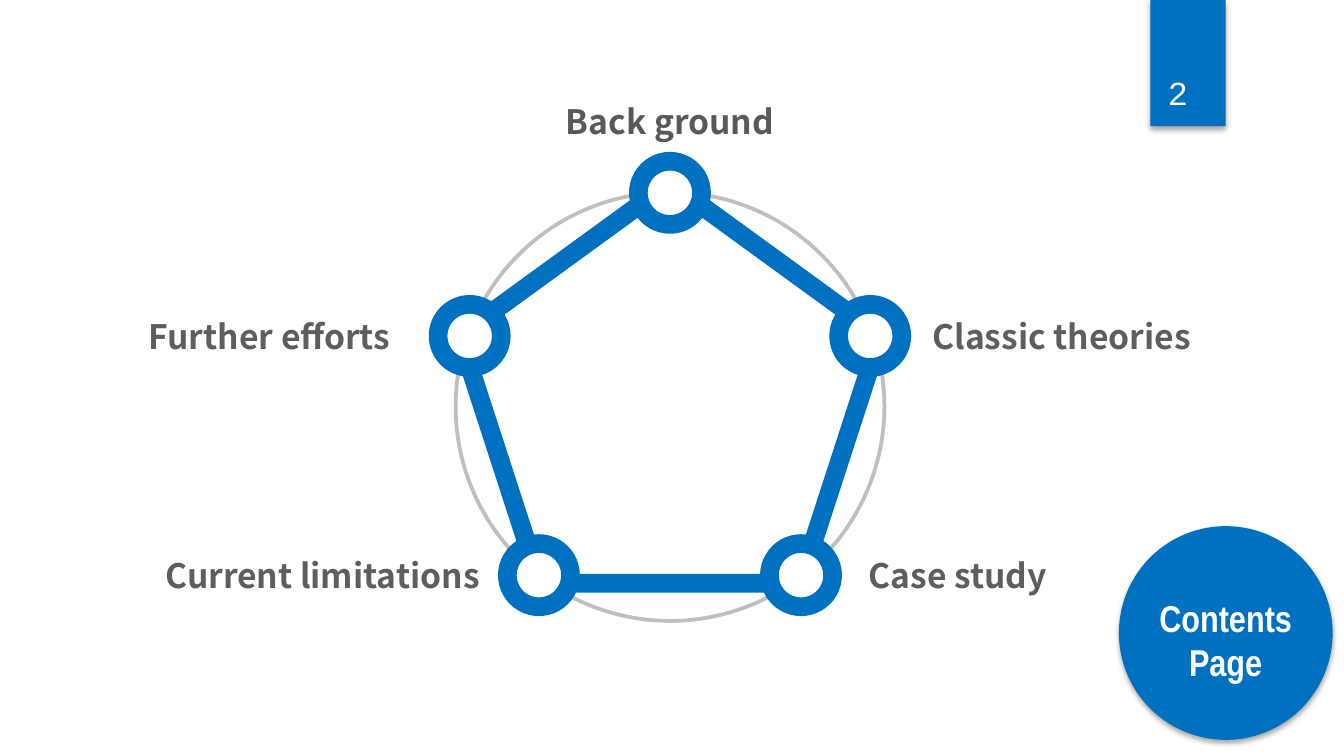
from collections import namedtuple

from lxml.etree import SubElement
from pptx import Presentation
from pptx.dml.color import RGBColor
from pptx.enum.shapes import MSO_SHAPE
from pptx.enum.text import MSO_AUTO_SIZE, PP_ALIGN
from pptx.oxml.ns import qn
from pptx.util import Inches, Pt

BLUE = RGBColor(0x00, 0x70, 0xC0)
WHITE = RGBColor(0xFF, 0xFF, 0xFF)
SILVER = RGBColor(0xBF, 0xBF, 0xBF)
DARK_GRAY = RGBColor(0x59, 0x59, 0x59)
WARM_GRAY = RGBColor(0x5F, 0x5E, 0x5C)

# The page is a grid of 100 columns; rows are as tall as columns are wide.
COLUMNS, ROWS = 100, 56.25
CELL = Inches(10) / COLUMNS
LINE_ROWS = 3.8
NODE_SIZE = 4.7

Box = namedtuple("Box", "left top width height")
# Node position from the ring's top centre; label position from the node's centre.
Topic = namedtuple("Topic", "text across down label_left label_rise label_width color")

TOPICS = [
    Topic("Back ground", 0, 0.05, -8.95, 7.25, 17.9, DARK_GRAY),
    Topic("Further efforts", -14.9, 10.7, -25.9, 1.9, 22, WARM_GRAY),
    Topic("Classic theories", 14.9, 10.7, 2.35, 1.9, 23.8, WARM_GRAY),
    Topic("Current limitations", -9.75, 28.5, -29.5, 1.9, 26.8, WARM_GRAY),
    Topic("Case study", 9.75, 28.5, 2.2, 1.9, 18.9, WARM_GRAY),
]


def to_emu(box):
    return [round(length * CELL) for length in box]


def add_figure(page, kind, box, fill=None, line=None, weight=0):
    figure = page.shapes.add_shape(kind, *to_emu(box))
    figure.shadow.inherit = False
    if fill is None:
        figure.fill.background()
    else:
        figure.fill.solid()
        figure.fill.fore_color.rgb = fill
    if line is None:
        figure.line.fill.background()
    else:
        figure.line.color.rgb = line
        figure.line.width = Pt(weight)
    return figure


def add_drop_shadow(figure):
    effects = figure.element.spPr.find(qn("a:effectLst"))
    shadow = SubElement(effects, qn("a:outerShdw"), blurRad=str(Pt(3.1)),
                        dist=str(Pt(1.8)), dir="5400000", rotWithShape="0")
    color = SubElement(shadow, qn("a:srgbClr"), val="000000")
    SubElement(color, qn("a:alpha"), val="35000")


def add_text(page, text, box, font="Noto Sans CJK SC", size=18, color=WHITE, bold=False):
    frame = page.shapes.add_textbox(*to_emu(box)).text_frame
    frame.word_wrap = True
    frame.auto_size = MSO_AUTO_SIZE.SHAPE_TO_FIT_TEXT
    frame.margin_left = frame.margin_right = Inches(0.07)
    frame.margin_top = frame.margin_bottom = Inches(0.04)
    para = frame.paragraphs[0]
    para.alignment = PP_ALIGN.CENTER
    span = para.add_run()
    span.text = text
    span.font.name = font
    span.font.size = Pt(size)
    span.font.bold = bold
    span.font.color.rgb = color


def add_page_number(page, box):
    add_drop_shadow(add_figure(page, MSO_SHAPE.RECTANGLE, box, fill=BLUE))
    add_text(page, "2 ", Box(box.left, box.top + 4.95, box.width, LINE_ROWS),
             font="Courier New")


def add_title_badge(page, box):
    add_drop_shadow(add_figure(page, MSO_SHAPE.OVAL, box, fill=BLUE))
    add_text(page, "Contents Page", Box(box.left + 1.75, box.top + 4.7, 12.4, 7.5),
             font="Arial Narrow", size=20, bold=True)


def add_topic_ring(page, box):
    middle = box.left + box.width / 2
    add_figure(page, MSO_SHAPE.OVAL, box, line=SILVER, weight=2)
    add_figure(page, MSO_SHAPE.REGULAR_PENTAGON,
               Box(middle - 15.65, box.top - 0.7, 31.3, 29.8), line=BLUE, weight=10)
    for topic in TOPICS:
        across, down = middle + topic.across, box.top + topic.down
        add_figure(page, MSO_SHAPE.OVAL,
                   Box(across - NODE_SIZE / 2, down - NODE_SIZE / 2, NODE_SIZE, NODE_SIZE),
                   fill=WHITE, line=BLUE, weight=10)
        add_text(page, topic.text,
                 Box(across + topic.label_left, down - topic.label_rise,
                     topic.label_width, LINE_ROWS),
                 color=topic.color, bold=True)


def main():
    deck = Presentation()
    deck.slide_width = round(COLUMNS * CELL)
    deck.slide_height = round(ROWS * CELL)
    page = deck.slides.add_slide(deck.slide_layouts[6])
    add_page_number(page, Box(85.6, 0, 5.6, 9.4))
    add_title_badge(page, Box(83.25, 39.15, 15.9, 15.9))
    add_topic_ring(page, Box(33.9, 14.3, 31.9, 31.9))
    deck.save("out.pptx")


if __name__ == "__main__":
    main()
